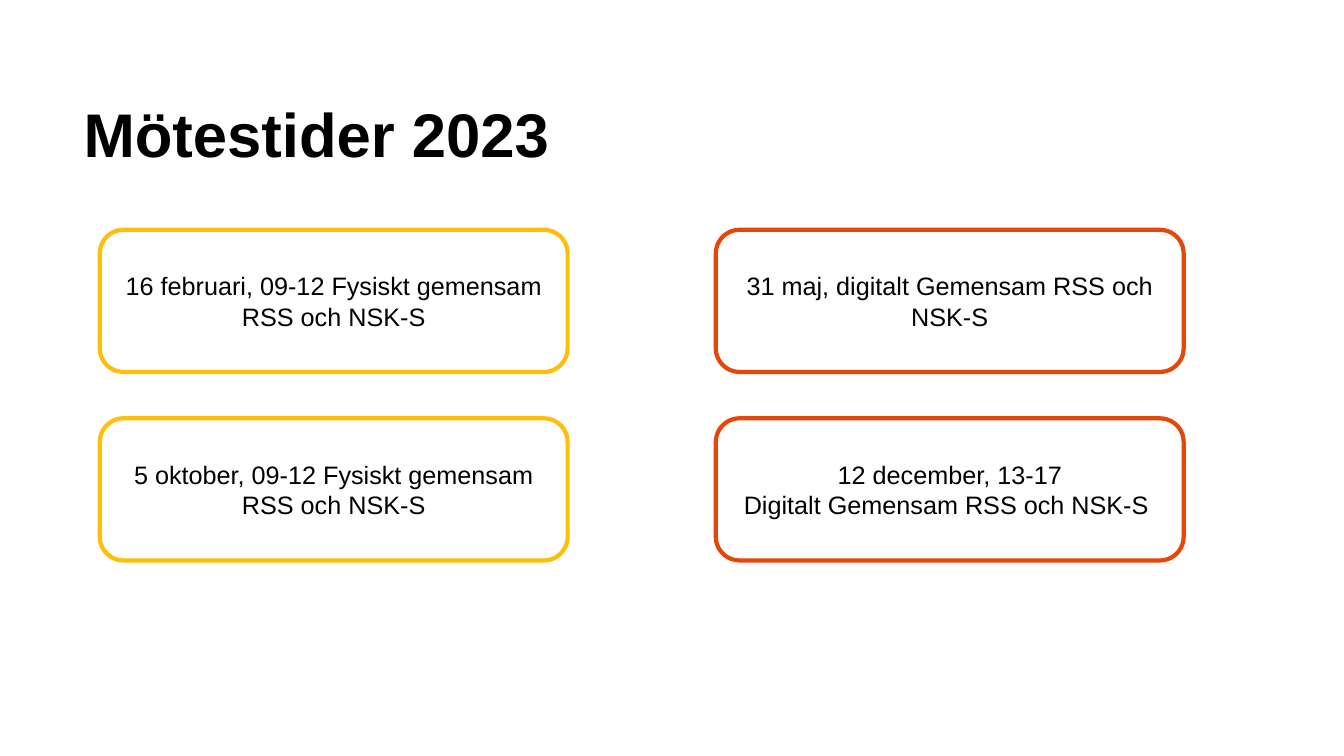
from dataclasses import dataclass

from pptx import Presentation as Deck
from pptx.dml.color import RGBColor as Rgb
from pptx.enum.shapes import MSO_SHAPE as Kind
from pptx.enum.text import MSO_ANCHOR as Anchor, PP_ALIGN as Align
from pptx.slide import Slide
from pptx.text.text import TextFrame as Frame
from pptx.util import Inches, Pt

WIDE, HIGH = 13.33, 7.5
LEFT, TOP = 0.99, 2.28
COL, ROW = 6.11, 1.87
CARD_W, CARD_H = 4.64, 1.41
FONT, BLACK = "Arial", "000000"
GOLD, RED = "FFBE0A", "E6460A"


@dataclass(frozen=True)
class Card:
    col: int
    row: int
    text: str


TINTS = (GOLD, RED)
CARDS = (
    Card(0, 0, "16 februari, 09-12 Fysiskt gemensam RSS och NSK-S"),
    Card(1, 0, "31 maj, digitalt Gemensam RSS och NSK-S"),
    Card(0, 1, "5 oktober, 09-12 Fysiskt gemensam RSS och NSK-S"),
    Card(1, 1, "12 december, 13-17\nDigitalt Gemensam RSS och NSK-S "),
)


def tint(code: str) -> Rgb:
    return Rgb.from_string(code)


def write(frame: Frame, text: str, size: int, align: Align,
          anchor: Anchor, bold: bool = False, gap: float = 1.0) -> None:
    frame.word_wrap = True
    frame.vertical_anchor = anchor
    frame.text = text
    for para in frame.paragraphs:
        para.alignment = align
        para.line_spacing = gap
        for run in para.runs:
            run.font.name = FONT
            run.font.size = Pt(size)
            run.font.bold = bold
            run.font.color.rgb = tint(BLACK)


def add_title(slide: Slide, text: str) -> None:
    box = slide.shapes.add_textbox(
        Inches(0.73), Inches(0.96), Inches(10.51), Inches(1.35))
    write(box.text_frame, text, 44, Align.LEFT, Anchor.TOP, True, 0.95)


def add_card(slide: Slide, card: Card) -> None:
    shape = slide.shapes.add_shape(
        Kind.ROUNDED_RECTANGLE,
        Inches(LEFT + card.col * COL), Inches(TOP + card.row * ROW),
        Inches(CARD_W), Inches(CARD_H))
    shape.shadow.inherit = False
    shape.fill.background()
    shape.line.color.rgb = tint(TINTS[card.col])
    shape.line.width = Pt(3)
    write(shape.text_frame, card.text, 18, Align.CENTER, Anchor.MIDDLE)


def main() -> None:
    deck = Deck()
    deck.slide_width, deck.slide_height = Inches(WIDE), Inches(HIGH)
    slide = deck.slides.add_slide(deck.slide_layouts[6])
    add_title(slide, "Mötestider 2023")
    for card in CARDS:
        add_card(slide, card)
    deck.save("out.pptx")


if __name__ == "__main__":
    main()
